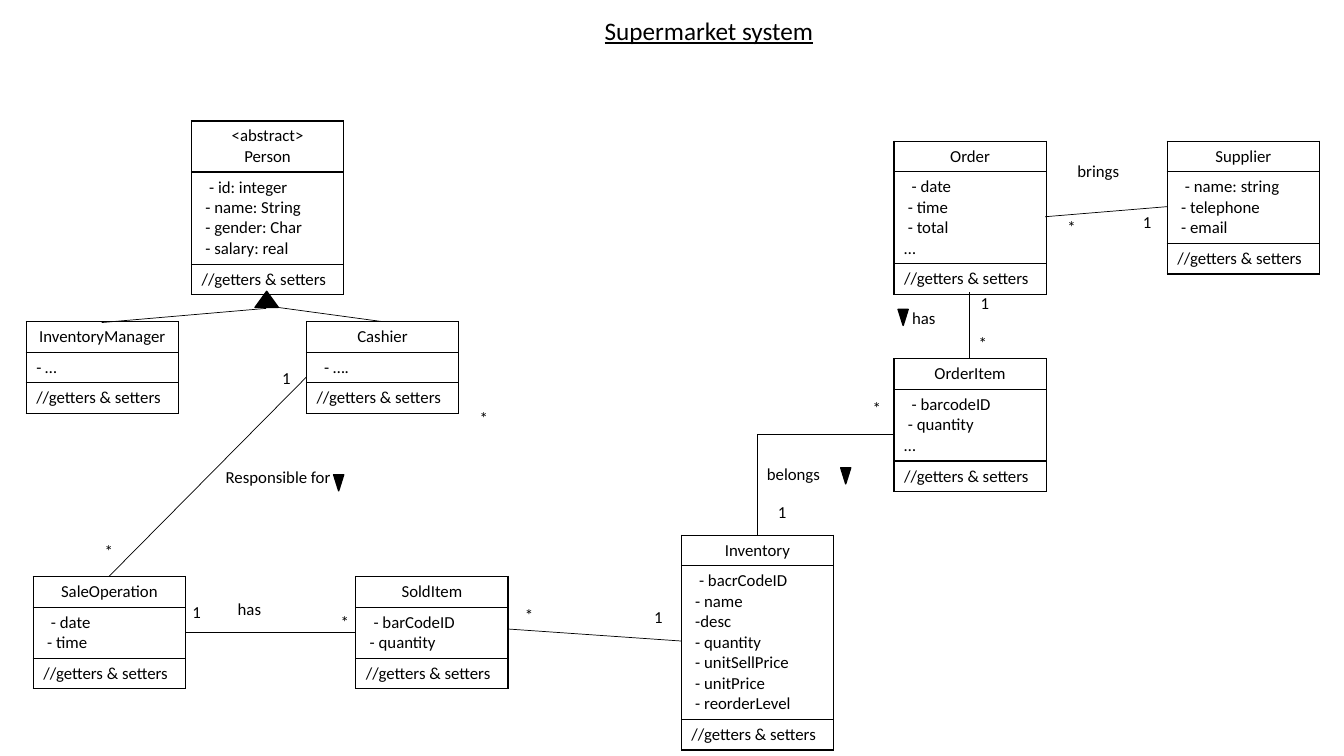
from lxml import etree
from pptx import Presentation
from pptx.dml.color import RGBColor
from pptx.enum.shapes import MSO_CONNECTOR, MSO_SHAPE
from pptx.enum.text import MSO_AUTO_SIZE, PP_ALIGN
from pptx.oxml.ns import qn
from pptx.util import Pt

STRAIGHT, ELBOW = MSO_CONNECTOR.STRAIGHT, MSO_CONNECTOR.ELBOW
TRIANGLE = MSO_SHAPE.ISOSCELES_TRIANGLE
FIT_SHAPE = MSO_AUTO_SIZE.SHAPE_TO_FIT_TEXT
LEFT, CENTER = PP_ALIGN.LEFT, PP_ALIGN.CENTER
BLACK = RGBColor(0, 0, 0)
FONT = "Calibri"
BODY_SIZE = 12
LINE_HEIGHT = 14.65
CELL_PADDING = 7.2
CLASS_WIDTH = 108.7
INDENT = 2.7
METHODS = ["//getters & setters"]

CLASSES = [
    (218.9, 229.7, ["Cashier"], ["- …."]),
    (18.7, 229.7, ["InventoryManager"], ["- …"]),
    (136.8, 86.4, ["<abstract>", "Person"],
     ["- id: integer", "- name: String", "- gender: Char", "- salary: real"]),
    (833.8, 100.8, ["Supplier"], ["- name: string", "- telephone", "- email"]),
    (638.6, 100.8, ["Order"], ["- date", "- time", "- total", "…"]),
    (638.6, 256.3, ["OrderItem"], ["- barcodeID", "- quantity", "…"]),
    (486.7, 382.3, ["Inventory"],
     ["- bacrCodeID", "- name", "-desc", "- quantity", "- unitSellPrice",
      "- unitPrice", "- reorderLevel"]),
    (254.2, 411.8, ["SoldItem"], ["- barCodeID", "- quantity"]),
    (23.8, 411.8, ["SaleOperation"], ["- date", "- time"]),
]

RELATIONS = [
    (STRAIGHT, 272.9, 229.7, 198.7, 219.6),
    (STRAIGHT, 190.1, 220.3, 72.7, 230.4),
    (STRAIGHT, 833.8, 147.6, 746.6, 154.8),
    (STRAIGHT, 132.5, 451.4, 254.2, 451.4),
    (STRAIGHT, 692.6, 208.8, 692.6, 256.3),
    (STRAIGHT, 218.9, 269.3, 77.8, 411.8),
    (STRAIGHT, 362.9, 449.3, 486.7, 457.9),
    (ELBOW, 638.6, 310.3, 540.7, 382.3),
]

INHERITANCE_HEAD = (182.2, 208.1, 16.6, 0)
READING_ARROWS = [(641.5, 221), (600.5, 334.1), (238.3, 339.1)]

RELATION_NAMES = [
    ("has", 644.4, 216, 31.7),
    ("belongs", 540.7, 327.6, 52.6),
    ("Responsible for", 154.1, 329.8, 90),
    ("brings", 762.5, 111.6, 44.6),
    ("has", 162.7, 424.1, 31.7),
]

MULTIPLICITIES = {
    "*": [(755.3, 151.2), (691.9, 234), (616.3, 280.8), (335.5, 288),
          (67.7, 383), (236.2, 433.4), (367.9, 428.4)],
    "1": [(693.4, 205.2), (548.6, 355), (460.1, 429.8), (194.4, 259.2),
          (809.3, 147.6), (130.3, 426.2)],
}


def add_run(paragraph, text, size=BODY_SIZE, underline=None):
    run = paragraph.add_run()
    run.text = text
    run.font.name = FONT
    run.font.size = Pt(size)
    run.font.underline = underline
    run.font.color.rgb = BLACK


def add_borders(cell):
    properties = cell._tc.get_or_add_tcPr()
    for position, side in enumerate(("a:lnL", "a:lnR", "a:lnT", "a:lnB")):
        border = etree.Element(qn(side), w=str(Pt(1)))
        fill = etree.SubElement(border, qn("a:solidFill"))
        etree.SubElement(fill, qn("a:srgbClr"), val=str(BLACK))
        properties.insert(position, border)


def member_indent(index, member, class_name):
    if not member.startswith("-") or class_name == "InventoryManager":
        return 0
    return INDENT if index else 2 * INDENT


def fill_cell(cell, lines, indents, alignment):
    cell.fill.background()
    add_borders(cell)
    frame = cell.text_frame
    for index, (line, indent) in enumerate(zip(lines, indents)):
        paragraph = frame.add_paragraph() if index else frame.paragraphs[0]
        paragraph.alignment = alignment
        if indent:
            paragraph._p.get_or_add_pPr().set("marL", str(Pt(indent)))
        add_run(paragraph, line)


def add_class(slide, left, top, title, members):
    sections = [title, members, METHODS]
    heights = [LINE_HEIGHT * len(lines) + CELL_PADDING for lines in sections]
    frame = slide.shapes.add_table(len(sections), 1, Pt(left), Pt(top),
                                   Pt(CLASS_WIDTH), Pt(sum(heights)))
    table = frame.table
    table.first_row = False
    table.horz_banding = False
    for row, height in zip(table.rows, heights):
        row.height = Pt(height)
    indents = [member_indent(index, member, title[0])
               for index, member in enumerate(members)]
    fill_cell(table.cell(0, 0), title, [0] * len(title), CENTER)
    fill_cell(table.cell(1, 0), members, indents, LEFT)
    fill_cell(table.cell(2, 0), METHODS, [0], LEFT)


def add_relation(slide, kind, *ends):
    relation = slide.shapes.add_connector(kind, *[Pt(end) for end in ends])
    relation.line.color.rgb = BLACK
    relation.line.width = Pt(0.5)
    properties = relation._element.spPr
    if kind == ELBOW:
        properties.find(qn("a:prstGeom")).set("prst", "bentConnector2")
    etree.SubElement(properties, qn("a:effectLst"))


def add_triangle(slide, left, top, width=7.2, rotation=180):
    triangle = slide.shapes.add_shape(TRIANGLE, Pt(left), Pt(top),
                                      Pt(width), Pt(11.5))
    triangle.rotation = rotation
    triangle.shadow.inherit = False
    triangle.fill.solid()
    triangle.fill.fore_color.rgb = BLACK
    triangle.line.color.rgb = BLACK
    triangle.line.width = Pt(1)


def add_label(slide, text, left, top, width=20.9, height=21.8,
              size=BODY_SIZE, underline=None):
    label = slide.shapes.add_textbox(Pt(left), Pt(top), Pt(width), Pt(height))
    frame = label.text_frame
    frame.word_wrap = False
    frame.auto_size = FIT_SHAPE
    add_run(frame.paragraphs[0], text, size, underline)


def main():
    presentation = Presentation()
    presentation.slide_width = Pt(960)
    presentation.slide_height = Pt(540)
    slide = presentation.slides.add_slide(presentation.slide_layouts[6])

    for diagram_class in CLASSES:
        add_class(slide, *diagram_class)
    for relation in RELATIONS:
        add_relation(slide, *relation)
    add_triangle(slide, *INHERITANCE_HEAD)
    for arrow in READING_ARROWS:
        add_triangle(slide, *arrow)
    for relation_name in RELATION_NAMES:
        add_label(slide, *relation_name)
    for symbol, places in MULTIPLICITIES.items():
        for place in places:
            add_label(slide, symbol, *place)
    add_label(slide, "Supermarket system", 424.8, 7.2, 164.9, 29.1,
              size=18, underline=True)
    presentation.save("out.pptx")


if __name__ == "__main__":
    main()
